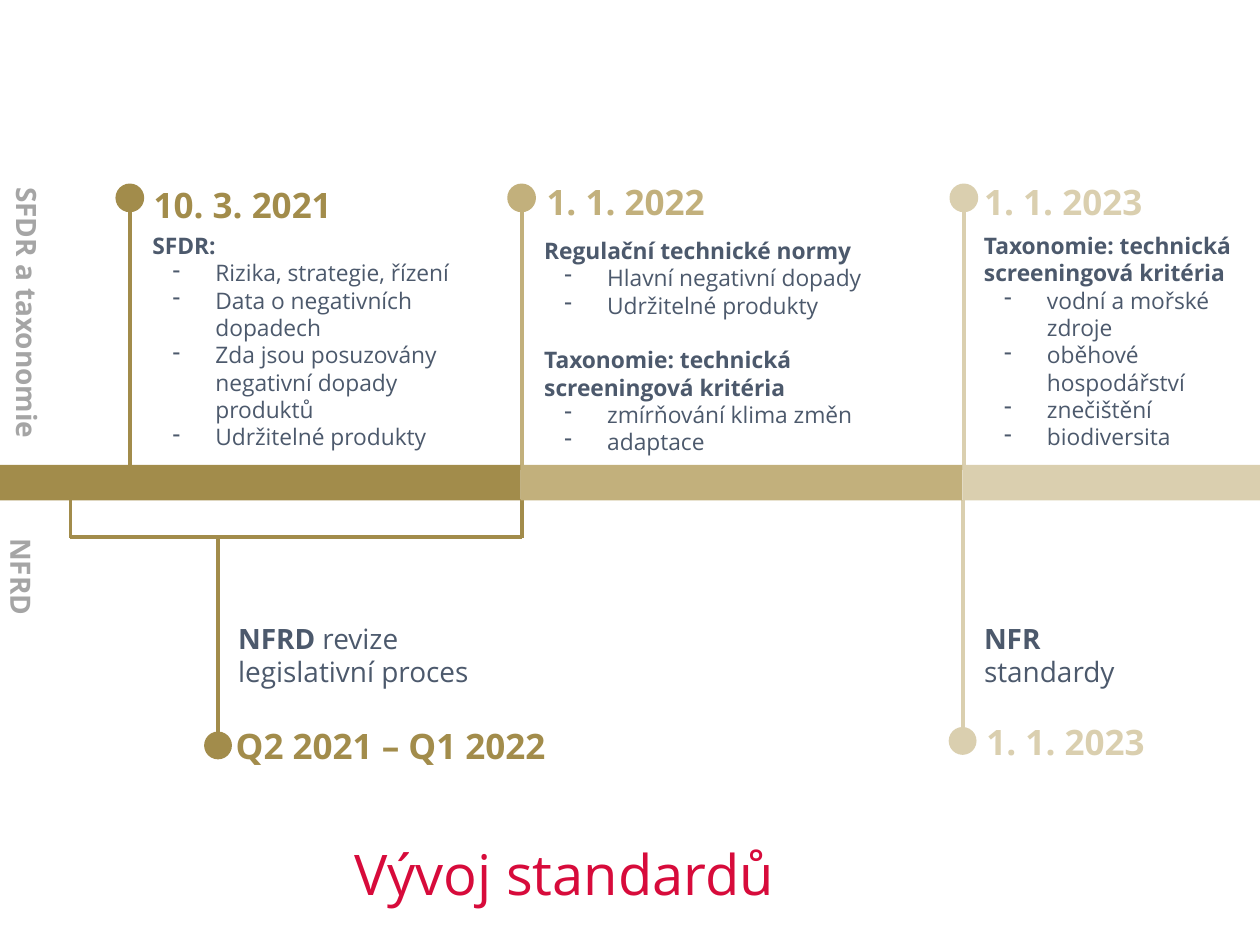
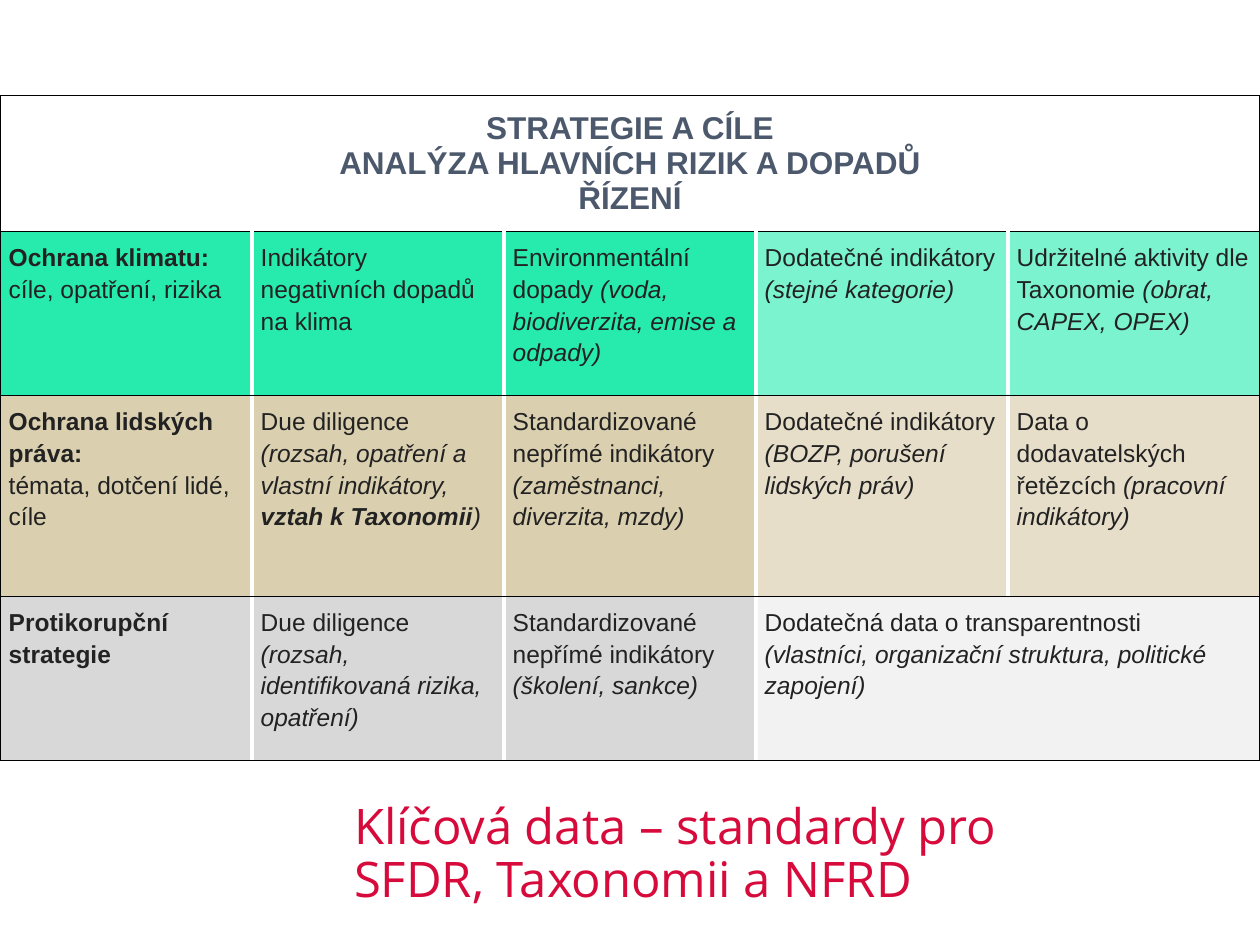
import pptx
import pptx.dml.color
import pptx.enum.shapes
import pptx.enum.text
import pptx.oxml
import pptx.oxml.ns
import pptx.util
from lxml import etree

Pt = pptx.util.Pt
ANCHOR = pptx.enum.text.MSO_ANCHOR
SHAPE = pptx.enum.shapes.MSO_SHAPE

# Shared look
FONT, TABLE_FONT = "Open Sans", "Arial"
RED, SLATE, GREY, INK = "D70B3B", "4C596C", "A5A5A5", "222222"
GOLD, MID_GOLD, PALE_GOLD = "A28C4B", "C2B07C", "DACFAF"
BLACK, WHITE = "000000", "FFFFFF"
TITLE_LEFT, TITLE_BOTTOM, TITLE_WIDTH = 202.3, 518.7, 382.3
INSET = (7.2, 3.6)

# Timeline content; a paragraph starting with "- " is a bullet
BAR_TOP, BAR_HEIGHT, DOT = 265.7, 20.2, 14.4
BAR_BOTTOM = BAR_TOP + BAR_HEIGHT
BARS = [(0, 297.5, GOLD), (297.5, 550, MID_GOLD), (550, 720, PALE_GOLD)]
BRACKET = (40.3, 298.1, 306.8)  # left, right, bottom
UPPER = [
    dict(x=74.2, color=GOLD, date="10. 3. 2021", date_at=(80.7, 101.5),
         notes_at=(87.1, 132.5, 188.6),
         notes=["SFDR:", "- Rizika, strategie, řízení", "- Data o negativních dopadech",
                "- Zda jsou posuzovány negativní dopady produktů",
                "- Udržitelné produkty"]),
    dict(x=298.1, color=MID_GOLD, date="1. 1. 2022", date_at=(305.2, 99.5),
         notes_at=(311, 135.2, 195.8),
         notes=["Regulační technické normy", "- Hlavní negativní dopady",
                "- Udržitelné produkty", "Taxonomie: technická screeningová kritéria",
                "- zmírňování klima změn", "- adaptace"]),
    dict(x=550.8, color=PALE_GOLD, date="1. 1. 2023", date_at=(555.3, 99.5),
         notes_at=(562.3, 132.5, 146.2),
         notes=["Taxonomie: technická screeningová kritéria",
                "- vodní a mořské zdroje", "- oběhové hospodářství",
                "- znečištění", "- biodiversita"]),
]
LOWER = [
    dict(x=124.6, top=BRACKET[2], dot_top=418.8, color=GOLD, date="Q2 2021 – Q1 2022",
         date_at=(127.6, 410.4), notes_at=(136.1, 355, 161.3),
         notes=[("NFRD", "b"), (" revize\nlegislativní proces", "")]),
    dict(x=550.1, top=BAR_BOTTOM, dot_top=416.2, color=PALE_GOLD, date="1. 1. 2023",
         date_at=(556.6, 408.4), notes_at=(562.3, 355, 106.6),
         notes=[("NFR", "b"), (" standardy", "")]),
]
SIDE_LABELS = [("SFDR a taxonomie", (-65.5, 167, 161.3, 27)),
               ("NFRD", (-18, 316.8, 59.8, 27))]

# Table content: cell = (runs, fill, columns spanned)
HEADER = ["STRATEGIE A CÍLE", "ANALÝZA HLAVNÍCH RIZIK A DOPADŮ", "ŘÍZENÍ"]
GREEN, PALE_GREEN, SAND = "26EBAD", "7AF3CE", "E6DEC9"
SILVER, PALE_SILVER = "D8D8D8", "F2F2F2"
TABLE_TOP, COLUMNS, COLUMN_WIDTH = 54.8, 5, 144
ROW_HEIGHTS = [77.6, 93.7, 114.7, 93.7]
ROWS = [
    [([("Ochrana klimatu: ", "b"), ("cíle, opatření, rizika", "")], GREEN, 1),
     ([("Indikátory negativních dopadů na klima", "")], GREEN, 1),
     ([("Environmentální dopady ", ""),
       ("(voda, biodiverzita, emise a odpady)", "i")], GREEN, 1),
     ([("Dodatečné indikátory ", ""), ("(stejné kategorie)", "i")], PALE_GREEN, 1),
     ([("Udržitelné aktivity dle Taxonomie ", ""),
       ("(obrat, CAPEX, OPEX)", "i")], PALE_GREEN, 1)],
    [([("Ochrana lidských práva:\n", "b"), ("témata, dotčení lidé, cíle", "")],
      PALE_GOLD, 1),
     ([("Due diligence ", ""), ("(rozsah, opatření a vlastní indikátory, ", "i"),
       ("vztah k Taxonomii", "bi"), (")", "i")], PALE_GOLD, 1),
     ([("Standardizované nepřímé indikátory ", ""),
       ("(zaměstnanci, diverzita, mzdy)", "i")], PALE_GOLD, 1),
     ([("Dodatečné indikátory ", ""), ("(BOZP, porušení lidských práv)", "i")], SAND, 1),
     ([("Data o dodavatelských řetězcích ", ""),
       ("(pracovní indikátory)", "i")], SAND, 1)],
    [([("Protikorupční strategie", "b")], SILVER, 1),
     ([("Due diligence ", ""),
       ("(rozsah, identifikovaná rizika, opatření)", "i")], SILVER, 1),
     ([("Standardizované nepřímé indikátory ", ""), ("(školení, sankce)", "i")], SILVER, 1),
     ([("Dodatečná data o transparentnosti ", ""),
       ("(vlastníci, organizační struktura, politické zapojení)", "i")],
      PALE_SILVER, 2)],
]


def rgb(value):
    return pptx.dml.color.RGBColor.from_string(value)


def set_all(target, **values):
    for name, value in values.items():
        setattr(target, name, value)


def set_margins(target, horizontal, vertical):
    set_all(target, margin_left=Pt(horizontal), margin_right=Pt(horizontal),
            margin_top=Pt(vertical), margin_bottom=Pt(vertical))


def add_runs(p, runs, size, color, font=FONT):
    """Add (text, style) runs; style holds b and/or i, a newline is a line break."""
    for text, style in runs:
        for i, line in enumerate(text.split("\n")):
            if i:
                p.add_line_break()
            if line:
                r = p.add_run()
                r.text = line
                set_all(r.font, name=font, size=Pt(size),
                        bold="b" in style, italic="i" in style)
                r.font.color.rgb = rgb(color)


def add_text(s, at, runs, size, color, inset=(0, 0)):
    sp = s.shapes.add_textbox(*map(Pt, at))
    tf = sp.text_frame
    tf.word_wrap = True
    set_margins(tf, *inset)
    add_runs(tf.paragraphs[0], runs, size, color)
    return sp


def add_title(s, text, size, height):
    at = (TITLE_LEFT, TITLE_BOTTOM - height, TITLE_WIDTH, height)
    tf = add_text(s, at, [(text, "")], size, RED).text_frame
    tf.vertical_anchor = ANCHOR.BOTTOM
    tf.paragraphs[0].line_spacing = 0.9


def add_line(s, x1, y1, x2, y2, color):
    line = s.shapes.add_connector(pptx.enum.shapes.MSO_CONNECTOR.STRAIGHT,
                                  *map(Pt, (x1, y1, x2, y2)))
    line.line.color.rgb = rgb(color)
    line.line.width = Pt(2.25)
    etree.SubElement(line._element.spPr, pptx.oxml.ns.qn("a:effectLst"))


def add_solid(s, kind, at, color, outline=0):
    sp = s.shapes.add_shape(kind, *map(Pt, at))
    sp.shadow.inherit = False
    sp.fill.solid()
    sp.fill.fore_color.rgb = rgb(color)
    if outline:
        sp.line.color.rgb = rgb(color)
        sp.line.width = Pt(outline)
    else:
        sp.line.fill.background()


def add_milestone(s, m, line_top, line_bottom, dot_top, outline):
    add_line(s, m["x"], line_top, m["x"], line_bottom, m["color"])
    add_solid(s, SHAPE.OVAL, (m["x"] - DOT / 2, dot_top, DOT, DOT), m["color"], outline)
    width = 201 if len(m["date"]) > 12 else 120
    add_text(s, (*m["date_at"], width, 31.7), [(m["date"], "b")], 20, m["color"], INSET)


def add_notes(s, at, notes):
    tf = add_text(s, (*at, 126), [], 13, SLATE).text_frame
    for i, note in enumerate(notes):
        p = tf.add_paragraph() if i else tf.paragraphs[0]
        if note.startswith("- "):
            pPr = p._p.get_or_add_pPr()
            pPr.set("marL", str(Pt(36)))
            pPr.set("indent", str(Pt(-24.5)))
            color = etree.SubElement(pPr, pptx.oxml.ns.qn("a:buClr"))
            etree.SubElement(color, pptx.oxml.ns.qn("a:srgbClr"), val=SLATE)
            etree.SubElement(pPr, pptx.oxml.ns.qn("a:buChar"), char="-")
            add_runs(p, [(note[2:], "")], 13, SLATE)
        else:
            if i:
                p.space_before = Pt(15.6)
            add_runs(p, [(note, "b")], 13, SLATE)


def add_border(cell, side, color, width):
    cell._tc.get_or_add_tcPr().append(pptx.oxml.parse_xml(
        f'<a:ln{side} {pptx.oxml.ns.nsdecls("a")} w="{Pt(width)}"><a:solidFill>'
        f'<a:srgbClr val="{color}"/></a:solidFill></a:ln{side}>'))


def prepare_cell(table, row, first, span):
    """Merge the span and draw black outer and row borders, white column gaps."""
    last = first + span - 1
    if span > 1:
        table.cell(row, first).merge(table.cell(row, last))
    thin, gap = (BLACK, 0.75), (WHITE, 3)
    for column in range(first, last + 1):
        cell = table.cell(row, column)
        if column == first:
            add_border(cell, "L", *(thin if first == 0 else gap))
        if column in (first, last):
            add_border(cell, "R", *(thin if last == COLUMNS - 1 else gap))
        add_border(cell, "T", *thin)
        add_border(cell, "B", *thin)
        cell.fill.background()
    return table.cell(row, first)


def build_timeline(s):
    add_title(s, "Vývoj standardů", 32, 34.6)
    for m in UPPER:
        add_milestone(s, m, 113, BAR_TOP + 3, 105.9, 2)
        add_notes(s, m["notes_at"], m["notes"])
    for m in LOWER:
        add_milestone(s, m, m["top"], m["dot_top"] + 2, m["dot_top"], 1.5)
        add_text(s, (*m["notes_at"], 38.9), m["notes"], 16, SLATE)
    # Bracket under the bar
    left, right, bottom = BRACKET
    for x in (left, right):
        add_line(s, x, BAR_BOTTOM - 1, x, bottom + 0.7, GOLD)
    add_line(s, left, bottom, right, bottom, GOLD)
    # Bar and side labels
    for start, end, color in BARS:
        add_solid(s, SHAPE.RECTANGLE, (start, BAR_TOP, end - start, BAR_HEIGHT), color)
    for label, at in SIDE_LABELS:
        add_text(s, at, [(label, "b")], 16, GREY, INSET).rotation = 90


def build_key_data(s):
    add_title(s, "Klíčová data – standardy pro SFDR, Taxonomii a NFRD", 28, 61.2)
    table = s.shapes.add_table(len(ROW_HEIGHTS), COLUMNS, 0, Pt(TABLE_TOP),
                               Pt(COLUMNS * COLUMN_WIDTH), Pt(sum(ROW_HEIGHTS))).table
    set_all(table, first_row=False, horz_banding=False)
    for row, height in zip(table.rows, ROW_HEIGHTS):
        row.height = Pt(height)
    # Header across all columns
    cell = prepare_cell(table, 0, 0, COLUMNS)
    cell.vertical_anchor = ANCHOR.MIDDLE
    set_margins(cell, *INSET)
    tf = cell.text_frame
    for i, line in enumerate(HEADER):
        p = tf.add_paragraph() if i else tf.paragraphs[0]
        p.alignment = pptx.enum.text.PP_ALIGN.CENTER
        add_runs(p, [(line, "b")], 18, SLATE, TABLE_FONT)
    # Body rows
    for row, cells in enumerate(ROWS, 1):
        column = 0
        for runs, fill, span in cells:
            cell = prepare_cell(table, row, column, span)
            cell.fill.solid()
            cell.fill.fore_color.rgb = rgb(fill)
            set_margins(cell, 5, 5)
            p = cell.text_frame.paragraphs[0]
            p.line_spacing = 1.15
            add_runs(p, runs, 14, INK, TABLE_FONT)
            column += span


def main():
    prs = pptx.Presentation()
    set_all(prs, slide_width=Pt(720), slide_height=Pt(540))
    for build in (build_timeline, build_key_data):
        build(prs.slides.add_slide(prs.slide_layouts[6]))
    prs.save("out.pptx")


if __name__ == "__main__":
    main()
